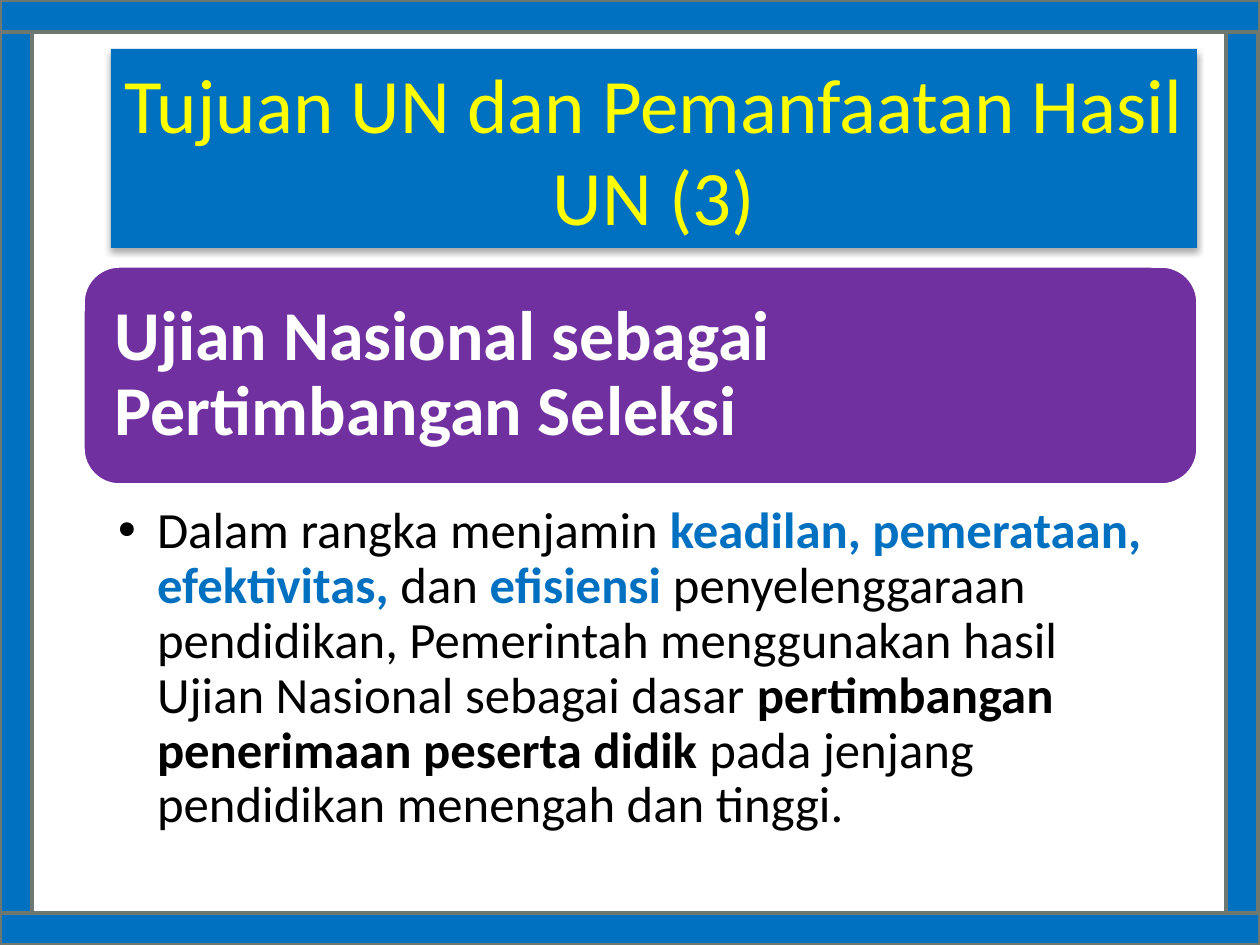
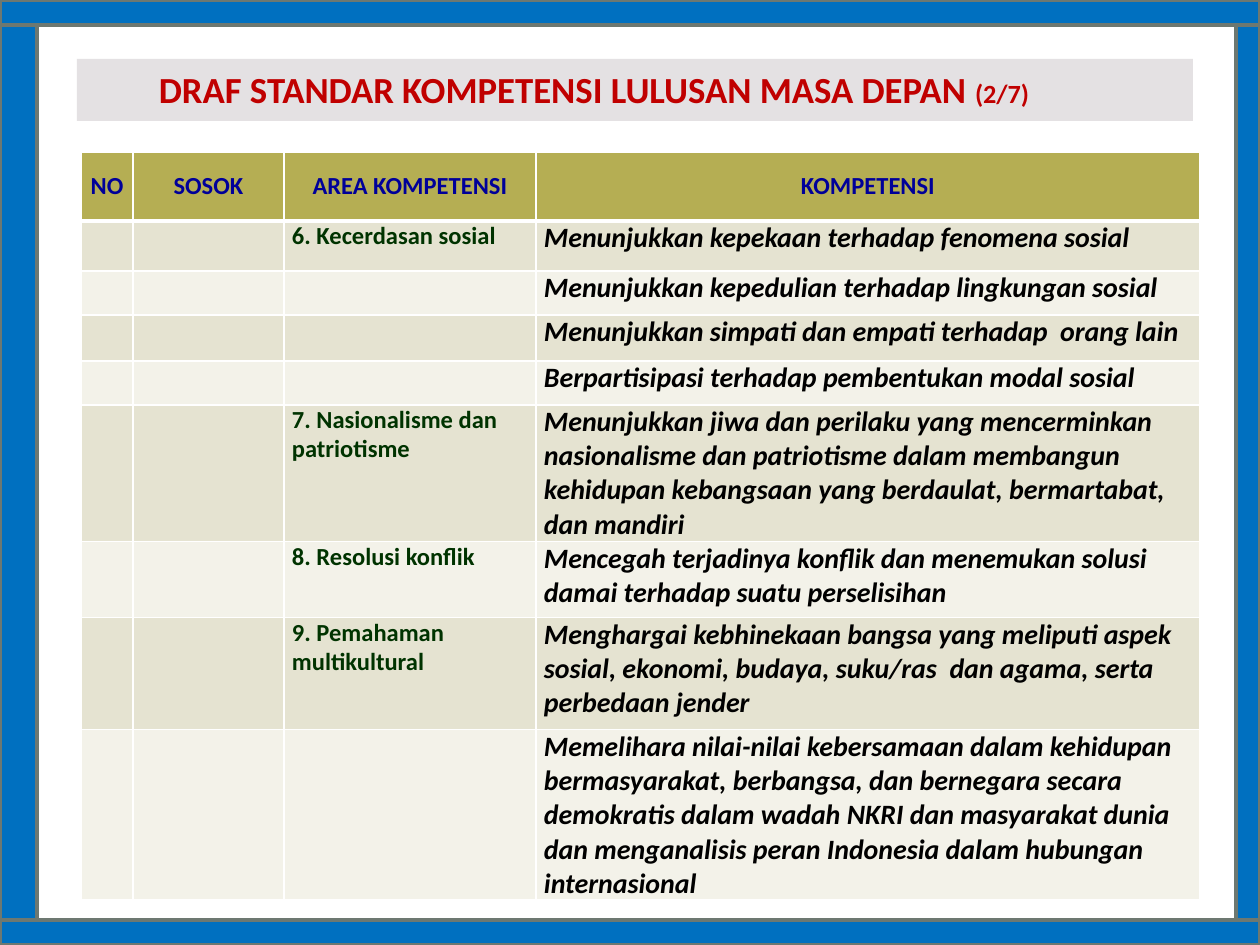
from itertools import accumulate
from lxml.etree import SubElement
from pptx import Presentation
from pptx.dml.color import RGBColor
from pptx.enum.shapes import MSO_SHAPE as Shape
from pptx.enum.text import MSO_ANCHOR as Anchor, PP_ALIGN as Align
from pptx.oxml.ns import qn
from pptx.util import Emu, Pt

COLORS = {
    "blue": "0070C0", "frame_line": "6D7871", "yellow": "FFFF00",
    "purple": "7030A0", "white": "FFFFFF", "black": "000000",
    "red": "C00000", "grey": "E4E1E3", "olive": "B5AE53",
    "navy": "000099", "green": "003300",
    "sand": "E5E3D1", "cream": "F3F2E9",
}
FONT = "Calibri"
EMU_PER_PX = 914400 / 126
SLIDE_W, SLIDE_H = 1260, 945

GOAL_TITLE = "Tujuan UN dan Pemanfaatan Hasil UN (3)"
GOAL_HEADING = "Ujian Nasional sebagai Pertimbangan Seleksi"
GOAL_POINT = [
    ("Dalam rangka menjamin ", "black", False),
    ("keadilan, pemerataan, efektivitas,", "blue", True),
    (" dan ", "black", False),
    ("efisiensi ", "blue", True),
    ("penyelenggaraan pendidikan, Pemerintah menggunakan hasil "
     "Ujian Nasional sebagai dasar ", "black", False),
    ("pertimbangan penerimaan peserta didik ", "black", True),
    ("pada jenjang pendidikan menengah dan tinggi.", "black", False),
]

DRAFT_TITLE = [("DRAF STANDAR KOMPETENSI LULUSAN MASA DEPAN ", 21), ("(2/7)", 15)]
COLUMNS = [("NO", 52), ("SOSOK", 151), ("AREA KOMPETENSI", 252), ("KOMPETENSI", 664)]
HEADER_H = 69
COMPETENCIES = [
    ("6. Kecerdasan sosial", "Menunjukkan kepekaan terhadap fenomena sosial", 50),
    ("", "Menunjukkan kepedulian terhadap lingkungan sosial", 44),
    ("", "Menunjukkan simpati dan empati terhadap  orang lain", 46),
    ("", "Berpartisipasi terhadap pembentukan modal sosial", 44),
    ("7. Nasionalisme dan patriotisme",
     "Menunjukkan jiwa dan perilaku yang mencerminkan nasionalisme dan patriotisme "
     "dalam membangun kehidupan kebangsaan yang berdaulat, bermartabat, dan mandiri", 137),
    ("8. Resolusi konflik",
     "Mencegah terjadinya konflik dan menemukan solusi damai terhadap suatu perselisihan", 76),
    ("9. Pemahaman multikultural",
     "Menghargai kebhinekaan bangsa yang meliputi aspek sosial, ekonomi, budaya, "
     "suku/ras  dan agama, serta perbedaan jender", 112),
    ("", "Memelihara nilai-nilai kebersamaan dalam kehidupan bermasyarakat, berbangsa, "
     "dan bernegara secara demokratis dalam wadah NKRI dan masyarakat dunia dan "
     "menganalisis peran Indonesia dalam hubungan internasional", 170),
]


def px(length):
    return Emu(round(length * EMU_PER_PX))


def rgb(color):
    return RGBColor.from_string(COLORS[color])


def add_run(paragraph, text, size, color, bold=False, italic=False):
    run = paragraph.add_run()
    run.text = text
    font = run.font
    font.name, font.size, font.bold, font.italic = FONT, Pt(size), bold, italic
    font.color.rgb = rgb(color)


def add_block(slide, box, fill, line=None, preset=Shape.RECTANGLE):
    block = slide.shapes.add_shape(preset, *map(px, box))
    block.shadow.inherit = False
    block.fill.solid()
    block.fill.fore_color.rgb = rgb(fill)
    if line:
        block.line.color.rgb = rgb(line)
        block.line.width = Pt(2)
    else:
        block.line.fill.background()
    return block


def first_paragraph(shape, align, anchor, insets=(13, 6, 13, 6)):
    frame = shape.text_frame
    frame.word_wrap = True
    frame.vertical_anchor = anchor
    (frame.margin_left, frame.margin_top,
     frame.margin_right, frame.margin_bottom) = map(px, insets)
    paragraph = frame.paragraphs[0]
    paragraph.alignment = align
    return paragraph


def add_frame(slide, band, left_w, right_x, right_w):
    side_h = SLIDE_H - 2 * band
    for box in [(0, band, left_w, side_h), (right_x, band, right_w, side_h),
                (0, 0, SLIDE_W, band), (0, SLIDE_H - band, SLIDE_W, band)]:
        add_block(slide, box, "blue", "frame_line")


def add_soft_shadow(shape):
    effects = shape._element.spPr.find(qn("a:effectLst"))
    shadow = SubElement(effects, qn("a:outerShdw"), blurRad="44450", dist="27940",
                        dir="5400000", rotWithShape="0")
    tint = SubElement(shadow, qn("a:srgbClr"), val=COLORS["black"])
    SubElement(tint, qn("a:alpha"), val="32000")


def add_bullet(paragraph, indent):
    props = paragraph._p.get_or_add_pPr()
    props.set("marL", str(px(indent)))
    props.set("indent", str(-px(indent)))
    SubElement(props, qn("a:buFont"), typeface="Arial")
    SubElement(props, qn("a:buChar"), char="•")


def style_cell(cell, fill, bottom_pt=1):
    props = cell._tc.get_or_add_tcPr()
    for side, points in (("L", 1), ("R", 1), ("T", 1), ("B", bottom_pt)):
        border = SubElement(props, qn(f"a:ln{side}"), w=str(Pt(points)))
        paint = SubElement(border, qn("a:solidFill"))
        SubElement(paint, qn("a:srgbClr"), val=COLORS["white"])
    cell.fill.solid()
    cell.fill.fore_color.rgb = rgb(fill)
    cell.margin_left = cell.margin_right = px(8)
    cell.margin_top = cell.margin_bottom = 0


def build_goal(slide):
    title = add_block(slide, (111, 49, 1086, 199), "blue")
    add_soft_shadow(title)
    add_run(first_paragraph(title, Align.CENTER, Anchor.MIDDLE), GOAL_TITLE, 44, "yellow")

    heading = add_block(slide, (83, 266, 1115, 219), "purple", "white",
                        Shape.ROUNDED_RECTANGLE)
    paragraph = first_paragraph(heading, Align.LEFT, Anchor.MIDDLE, (21, 21, 21, 21))
    paragraph.line_spacing = 0.9
    add_run(paragraph, GOAL_HEADING, 40, "white", bold=True)

    point = slide.shapes.add_textbox(*map(px, (83, 499, 1115, 348)))
    paragraph = first_paragraph(point, Align.LEFT, Anchor.TOP, (35, 6, 36, 6))
    paragraph.line_spacing = 0.9
    add_bullet(paragraph, 39)
    for text, color, bold in GOAL_POINT:
        add_run(paragraph, text, 29, color, bold)

    add_frame(slide, 32, 32, 1226, 32)


def build_draft(slide):
    widths = [width for _, width in COLUMNS]
    heights = [HEADER_H] + [height for *_, height in COMPETENCIES]
    total_w, total_h = list(accumulate(widths))[-1], list(accumulate(heights))[-1]
    table = slide.shapes.add_table(len(heights), len(widths),
                                   *map(px, (81, 152, total_w, total_h))).table
    table.first_row = table.horz_banding = False
    for column, width in zip(table.columns, widths):
        column.width = px(width)
    for row, height in zip(table.rows, heights):
        row.height = px(height)

    for cell, (label, _) in zip(table.rows[0].cells, COLUMNS):
        style_cell(cell, "olive", 3)
        cell.vertical_anchor = Anchor.MIDDLE
        paragraph = cell.text_frame.paragraphs[0]
        paragraph.alignment = Align.CENTER
        add_run(paragraph, label, 14, "navy", bold=True)

    for index, (area, competency, _) in enumerate(COMPETENCIES):
        cells = list(table.rows[index + 1].cells)
        for cell in cells:
            style_cell(cell, ("sand", "cream")[index % 2])
        if area:
            add_run(cells[2].text_frame.paragraphs[0], area, 14, "green", bold=True)
        add_run(cells[3].text_frame.paragraphs[0], competency, 16, "black",
                bold=True, italic=True)

    add_block(slide, (77, 59, 1116, 62), "grey")
    title = slide.shapes.add_textbox(*map(px, (136, 58, 916, 61)))
    paragraph = first_paragraph(title, Align.CENTER, Anchor.MIDDLE)
    for text, size in DRAFT_TITLE:
        add_run(paragraph, text, size, "red", bold=True)

    add_frame(slide, 25, 37, 1236, 24)


def main():
    deck = Presentation()
    deck.slide_width, deck.slide_height = px(SLIDE_W), px(SLIDE_H)
    for build in (build_goal, build_draft):
        build(deck.slides.add_slide(deck.slide_layouts[6]))
    deck.save("out.pptx")


if __name__ == "__main__":
    main()
